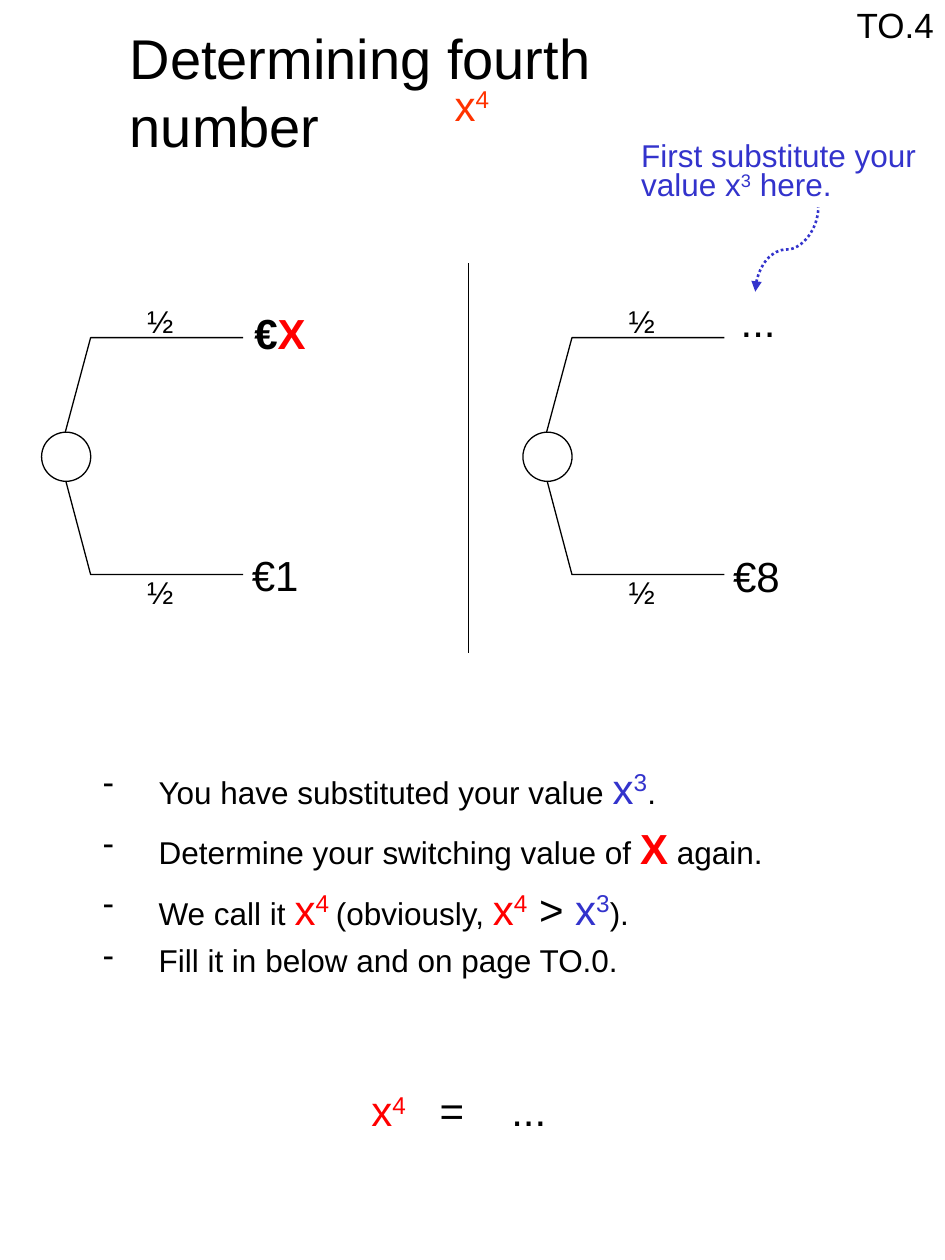
from pptx import Presentation
from pptx.dml.color import RGBColor
from pptx.enum.dml import MSO_LINE_DASH_STYLE as Dash
from pptx.enum.shapes import MSO_CONNECTOR as Connector, MSO_SHAPE as Shape
from pptx.enum.text import MSO_ANCHOR as Anchor, MSO_AUTO_SIZE as AutoSize, PP_ALIGN as Align
from pptx.oxml.ns import qn
from pptx.util import Inches, Pt
from lxml.etree import SubElement

BLACK, RED, ORANGE, BLUE = "000000", "FF0000", "FF3300", "3333CC"
TREE_OFFSET = 3.82


def color(value):
    return RGBColor.from_string(value)


def set_attributes(target, values):
    for name, value in values.items():
        setattr(target, name, value)


def run(text, size=18, fill=BLACK, bold=False, raised=False):
    return {"text": text, "size": size, "fill": fill, "bold": bold, "raised": raised}


def power(exponent, fill):
    return [run("x", 24, fill), run(exponent, 24, fill, raised=True)]


def write_runs(paragraph, runs):
    for item in runs:
        text_run = paragraph.add_run()
        text_run.text = item["text"]
        font = text_run.font
        set_attributes(font, {"name": "Arial", "size": Pt(item["size"]), "bold": item["bold"]})
        font.color.rgb = color(item["fill"])
        if item["raised"]:
            text_run._r.get_or_add_rPr().set("baseline", "30000")


def add_text(slide, box, paragraphs, spacings=(None,), wrap=False):
    shape = slide.shapes.add_textbox(*map(Inches, box))
    frame = shape.text_frame
    set_attributes(frame, {"word_wrap": wrap, "auto_size": AutoSize.SHAPE_TO_FIT_TEXT})
    for index, (runs, spacing) in enumerate(zip(paragraphs, spacings)):
        paragraph = frame.add_paragraph() if index else frame.paragraphs[0]
        paragraph.line_spacing = spacing
        write_runs(paragraph, runs)
    return shape


def add_title(slide, text):
    title = slide.shapes.title
    set_attributes(title, {"left": Inches(0.93), "top": Inches(0.14),
                           "width": Inches(5), "height": Inches(1.15)})
    set_attributes(title.text_frame, {"word_wrap": True, "auto_size": AutoSize.NONE,
                                      "vertical_anchor": Anchor.TOP})
    paragraph = title.text_frame.paragraphs[0]
    paragraph.alignment = Align.LEFT
    write_runs(paragraph, [run(text, 32)])


def format_line(line, fill=BLACK, width=0.75):
    line.color.rgb = color(fill)
    line.width = Pt(width)


def add_branch(slide, points):
    start, *others = [(Inches(x), Inches(y)) for x, y in points]
    builder = slide.shapes.build_freeform(*start)
    builder.add_line_segments(others, close=False)
    shape = builder.convert_to_shape()
    shape.shadow.inherit = False
    shape.fill.background()
    format_line(shape.line)


def add_tree(slide, offset):
    for start, end, label_top in ((3.61, 2.68, 2.35), (3.62, 4.56, 4.5)):
        add_branch(slide, [(offset + 0.47, start), (offset + 0.72, end), (offset + 1.93, end)])
        add_text(slide, (offset + 1.07, label_top, 0.41, 0.4), [[run("½")]])
    node = slide.shapes.add_shape(Shape.OVAL, *map(Inches, (offset + 0.33, 3.43, 0.39, 0.39)))
    node.shadow.inherit = False
    node.fill.solid()
    node.fill.fore_color.rgb = color("FFFFFF")
    format_line(node.line)


def add_line(slide, kind, start, end, fill=BLACK, width=0.75):
    connector = slide.shapes.add_connector(kind, *map(Inches, (*start, *end)))
    format_line(connector.line, fill, width)
    SubElement(connector._element.spPr, qn("a:effectLst"))
    return connector


def add_curved_arrow(slide):
    arrow = add_line(slide, Connector.CURVE, (5.91, 1.73), (6.58, 2.23), BLUE, 1.5)
    arrow.line.dash_style = Dash.ROUND_DOT
    arrow._element.spPr.find(qn("a:xfrm")).set("rot", str(270 * 60000))
    SubElement(arrow.line._get_or_add_ln(), qn("a:headEnd"), type="triangle")


def add_bullets(slide, box, items):
    shape = add_text(slide, box, items, [1.2] * len(items), wrap=True)
    indent = Inches(0.44)
    for paragraph in shape.text_frame.paragraphs:
        properties = paragraph._p.get_or_add_pPr()
        properties.set("marL", str(indent))
        properties.set("indent", str(-indent))
        SubElement(properties, qn("a:buChar"), char="-")


def add_answer(slide):
    runs = power("4", RED) + [run("\t=\t...", 24)]
    shape = add_text(slide, (2.85, 8.56, 1.8, 0.5), [runs], wrap=True)
    properties = shape.text_frame.paragraphs[0]._p.get_or_add_pPr()
    tabs = SubElement(properties, qn("a:tabLst"))
    for position in (0.54, 1.11):
        SubElement(tabs, qn("a:tab"), pos=str(Inches(position)), algn="l")


def main():
    presentation = Presentation()
    set_attributes(presentation, {"slide_width": Inches(7.5), "slide_height": Inches(10)})
    slide = presentation.slides.add_slide(presentation.slide_layouts[5])

    add_title(slide, "Determining fourth number")
    add_text(slide, (3.51, 0.58, 0.48, 0.5), [power("4", ORANGE)])
    add_text(slide, (6.7, -0.02, 0.82, 0.44), [[run("TO.4", 20)]])

    for offset in (0, TREE_OFFSET):
        add_tree(slide, offset)
    add_line(slide, Connector.STRAIGHT, (3.72, 2.09), (3.72, 5.18))

    add_text(slide, (1.92, 2.39, 0.61, 0.5),
             [[run("€", 24, bold=True), run("X", 24, RED, bold=True)]])
    add_text(slide, (1.9, 4.31, 0.57, 0.5), [[run("€1", 24)]])
    add_text(slide, (5.78, 2.3, 0.48, 0.5), [[run("...", 24)]])
    add_text(slide, (5.72, 4.32, 0.57, 0.5), [[run("€8", 24)]])

    hint = [[run("First substitute your", fill=BLUE)],
            [run("value x", fill=BLUE), run("3", fill=BLUE, raised=True),
             run(" here.", fill=BLUE)]]
    add_text(slide, (4.99, 1.11, 2.38, 0.55), hint, (0.7, 0.8))
    add_curved_arrow(slide)

    add_bullets(slide, (0.72, 5.92, 5.88, 1.92), [
        [run("You have substituted your value "), *power("3", BLUE), run(".")],
        [run("Determine your switching value of "), run("X", 24, RED, bold=True), run(" again.")],
        [run("We call it "), *power("4 ", RED), run("(obviously, "), *power("4", RED),
         run(" > ", 24), *power("3", BLUE), run(").")],
        [run("Fill it in below and on page TO.0.")],
    ])
    add_answer(slide)
    presentation.save("out.pptx")


if __name__ == "__main__":
    main()
